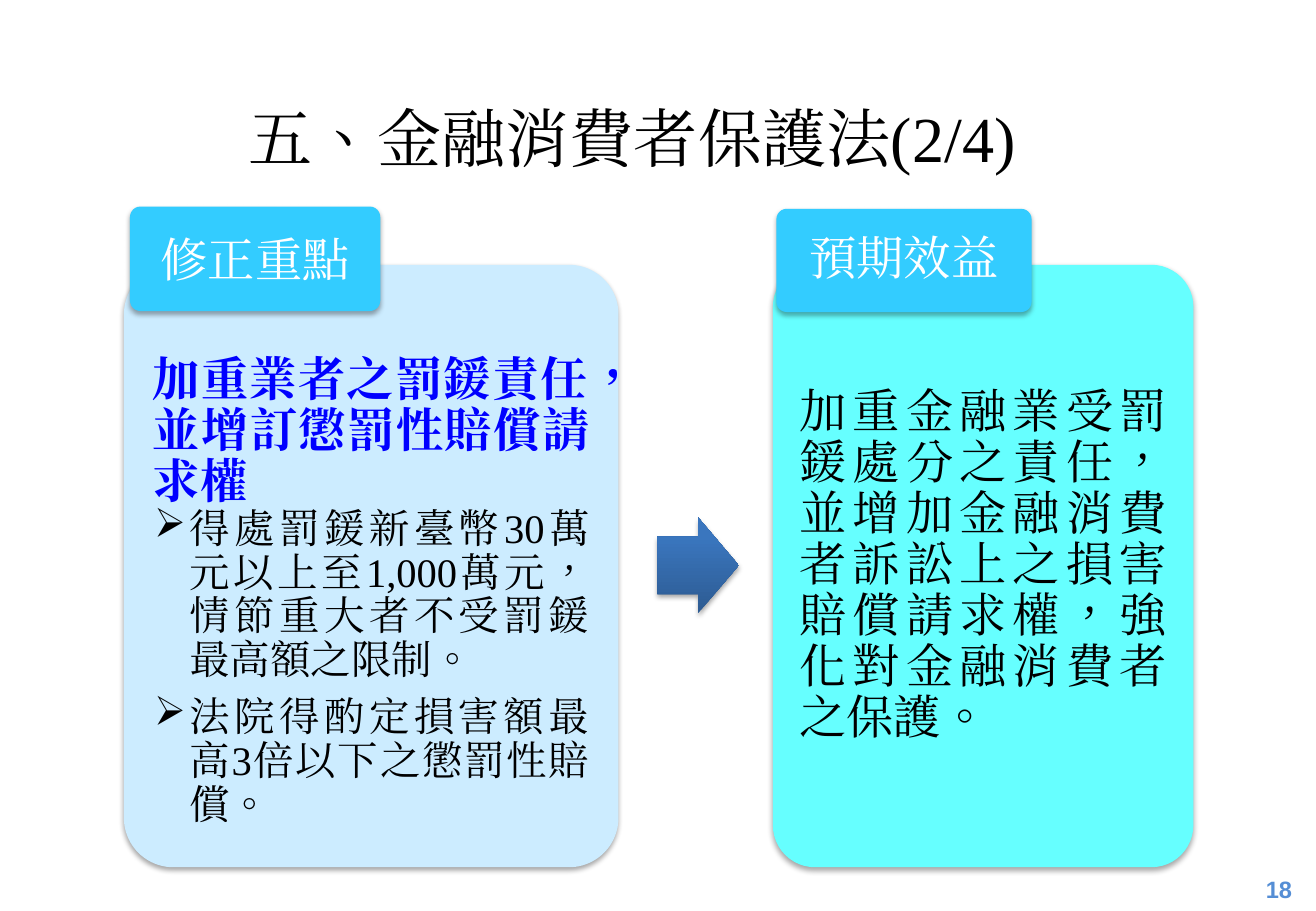
import lxml.etree
import pptx
import pptx.dml.color
import pptx.enum.dml
import pptx.enum.shapes
import pptx.enum.text
import pptx.oxml
import pptx.oxml.ns
import pptx.util

ALIGN = pptx.enum.text.PP_ALIGN
SHAPE = pptx.enum.shapes.MSO_SHAPE
COLOR = pptx.dml.color.RGBColor.from_string
THEME = {
    "serif": "Times New Roman", "sans": "Arial", "cjk": "Noto Sans CJK SC",
    "title": 38, "heading": 28, "detail": 24, "number": 14,
    "ink": "000000", "white": "FFFFFF", "accent": "0000FF", "page": "558ED5",
    "tab": "33CCFF", "focus": "CCECFF", "benefit": "66FFFF",
    "arrow_dark": "2D5B92", "arrow_light": "3A76BE",
}
CORNER = 0.1
SHADOW = (
    '<a:effectLst xmlns:a="http://schemas.openxmlformats.org/drawingml/2006/main">'
    '<a:outerShdw blurRad="39370" dist="22860" dir="5400000" rotWithShape="0">'
    '<a:srgbClr val="000000"><a:alpha val="35000"/></a:srgbClr>'
    '</a:outerShdw></a:effectLst>'
)

deck = pptx.Presentation()
deck.slide_width = pptx.util.Inches(10.83)
deck.slide_height = pptx.util.Inches(7.5)
page = deck.slides.add_slide(deck.slide_layouts[6])


def draw(kind, area, fill, adjustments):
    left, top, width, height = area
    shape = page.shapes.add_shape(
        kind,
        int(deck.slide_width * left / 100), int(deck.slide_height * top / 100),
        int(deck.slide_width * width / 100), int(deck.slide_height * height / 100),
    )
    for index, value in enumerate(adjustments):
        shape.adjustments[index] = value
    if fill:
        shape.fill.solid()
        shape.fill.fore_color.rgb = COLOR(fill)
    shape.line.fill.background()
    shape._element.spPr.append(pptx.oxml.parse_xml(SHADOW))
    return shape


def write(bounds, paragraphs, margins):
    box = page.shapes.add_textbox(*bounds)
    frame = box.text_frame
    frame.word_wrap = True
    frame.vertical_anchor = pptx.enum.text.MSO_ANCHOR.MIDDLE
    for side, margin in zip(("left", "top", "right", "bottom"), margins):
        setattr(frame, f"margin_{side}", pptx.util.Inches(margin))
    for number, (runs, layout, style, bullet) in enumerate(paragraphs):
        para = frame.add_paragraph() if number else frame.paragraphs[0]
        for name, value in layout.items():
            setattr(para, name, value)
        if bullet:
            properties = para._p.get_or_add_pPr()
            properties.set("marL", str(pptx.util.Inches(0.3)))
            properties.set("indent", str(pptx.util.Inches(-0.29)))
            mark = lxml.etree.SubElement(properties, pptx.oxml.ns.qn("a:buChar"))
            mark.set("char", bullet)
        for text, face in runs:
            span = para.add_run()
            span.text = text
            size, color, bold = style
            values = {"name": face, "size": pptx.util.Pt(size), "bold": bold}
            for name, value in values.items():
                setattr(span.font, name, value)
            span.font.color.rgb = COLOR(color)
            properties = span._r.get_or_add_rPr()
            properties.set("lang", "zh-TW")
            asian = lxml.etree.SubElement(properties, pptx.oxml.ns.qn("a:ea"))
            asian.set("typeface", THEME["serif"])


serif, cjk = THEME["serif"], THEME["cjk"]
plain = {"alignment": ALIGN.JUSTIFY}
centred = {"alignment": ALIGN.CENTER}
tight = {**plain, "line_spacing": 0.9}
spaced = {**tight, "space_after": pptx.util.Pt(8)}
detail = (THEME["detail"], THEME["ink"], False)

labels = [
    ((18.01, 10.13, 63.99, 9.87), "五、金融消費者保護法(2/4)", serif, plain,
     (THEME["title"], THEME["ink"], False)),
    ((94.37, 95.2, 5.63, 4.8), "18", THEME["sans"], centred,
     (THEME["number"], THEME["page"], True)),
]
for (left, top, width, height), text, face, layout, style in labels:
    bounds = (
        int(deck.slide_width * left / 100), int(deck.slide_height * top / 100),
        int(deck.slide_width * width / 100), int(deck.slide_height * height / 100),
    )
    write(bounds, [([(text, face)], layout, style, None)], (0.1, 0.05, 0.1, 0.05))

focus = [
    ([("加重業者之罰鍰責任，並", serif), ("增訂懲罰性賠償請求權", cjk)],
     tight, (THEME["heading"], THEME["accent"], True), None),
    ([("得處罰鍰新臺幣30萬元以上至1,000萬元，情節重大者不受罰鍰最高額之限制。", serif)],
     spaced, detail, "➢"),
    ([("法院得酌定損害額最高3倍以下之懲罰性賠償。", serif)], spaced, detail, "➢"),
]
benefit = [
    ([("加重金融業受罰鍰處分之責任，並", serif),
      ("增加金融消費者訴訟上之損害賠償請求權，強化對金融消費者之保護。", cjk)],
     spaced, (THEME["heading"], THEME["ink"], False), None),
]
heading = (THEME["heading"], THEME["white"], False)
tab_margins = (0.06, 0.04, 0.06, 0.04)
cards = [
    ((9.42, 29.07, 37.58, 66.13), THEME["focus"], focus, (0.12, 0.54, 0.12, 0.12)),
    ((58.73, 29.07, 31.95, 66.13), THEME["benefit"], benefit, (0.12, 0.12, 0.12, 0.12)),
    ((9.88, 22.67, 19.02, 11.47), THEME["tab"],
     [([("修正重點", serif)], centred, heading, None)], tab_margins),
    ((59, 22.93, 19.39, 11.33), THEME["tab"],
     [([("預期效益", serif)], {**spaced, **centred}, heading, None)], tab_margins),
]
for area, fill, paragraphs, margins in cards:
    card = draw(SHAPE.ROUNDED_RECTANGLE, area, fill, [CORNER])
    inset = int(0.29 * CORNER * min(card.width, card.height))
    bounds = (card.left + inset, card.top + inset,
              card.width - 2 * inset, card.height - 2 * inset)
    write(bounds, paragraphs, margins)

arrow = draw(SHAPE.RIGHT_ARROW, (49.95, 56.8, 6.19, 10.53), None, [0.6, 0.5])
arrow.fill.gradient()
arrow.fill.gradient_angle = 90
stops = [(0, THEME["arrow_dark"]), (0.8, THEME["arrow_light"])]
for stop, (position, color) in zip(arrow.fill.gradient_stops, stops):
    stop.position = position
    stop.color.rgb = COLOR(color)

deck.save("out.pptx")
